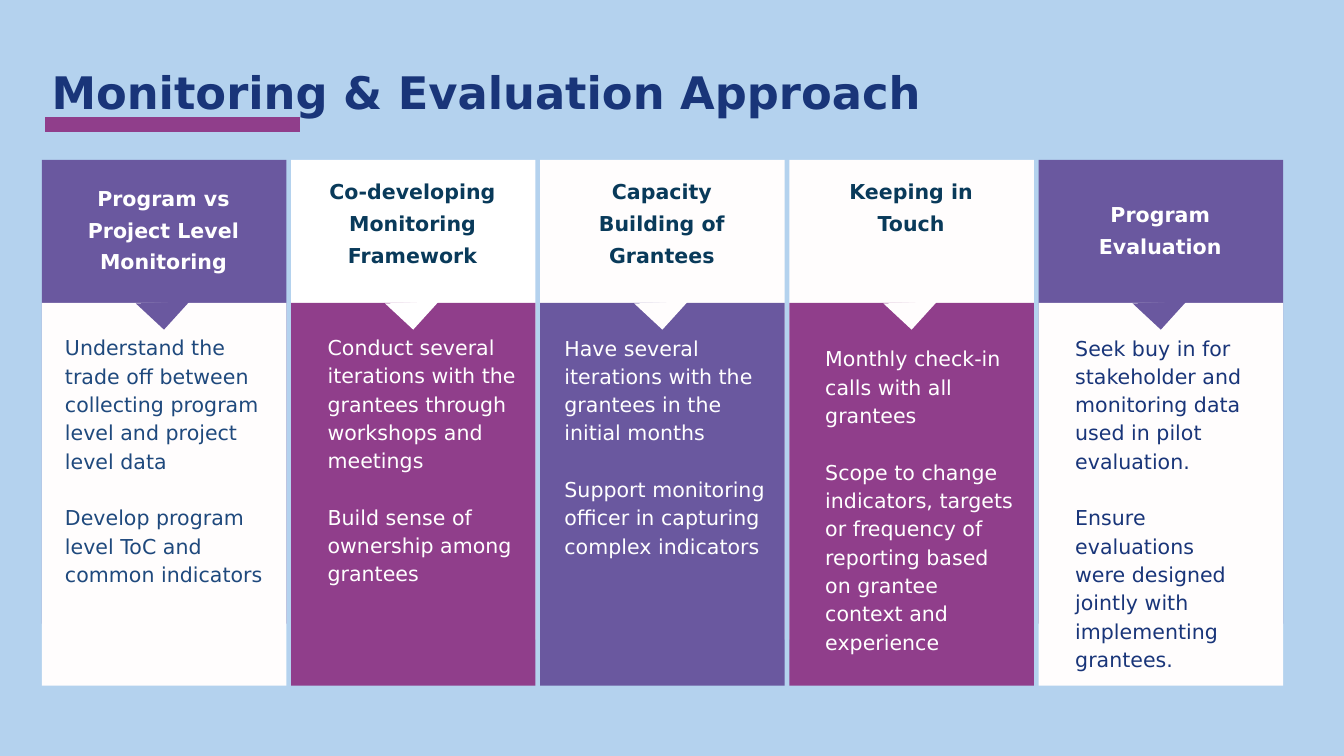
from dataclasses import dataclass

from pptx import Presentation
from pptx.dml.color import RGBColor
from pptx.enum.shapes import MSO_SHAPE as SHAPE
from pptx.enum.text import MSO_ANCHOR as ANCHOR, MSO_AUTO_SIZE as AUTO, PP_ALIGN as ALIGN
from pptx.util import Pt


@dataclass(frozen=True)
class Theme:
    font: str = "DejaVu Sans"
    sky: str = "B4D2EE"
    navy: str = "193579"
    blue: str = "1F497D"
    teal: str = "093A5A"
    violet: str = "6A589F"
    plum: str = "903E8B"
    white: str = "FFFFFF"
    snow: str = "FFFDFD"
    title_size: int = 24
    text_size: int = 11


T = Theme()

LEFT, PITCH, COL_W = 22.4, 133.5, 131
HEAD_Y, BODY_Y, BODY_H = 85.7, 162.3, 205
ARROW = [(79.2, 161.5), (65.5, 176.6), (50.4, 162.6)]

# Boxes are (offset from the column's left edge, top, width, height).
COLUMNS = [
    dict(head="Program vs Project Level Monitoring", head_box=(13, 90, 104.4, 62.6),
         head_fill=T.violet, head_color=T.white, anchor=ANCHOR.MIDDLE, head_h=248.4,
         body=["Understand the trade off between collecting program level and project level data",
               "Develop program level ToC and common indicators"],
         body_box=(12.4, 177.8, 118.8, 166), body_fill=T.snow, body_color=T.blue),
    dict(head="Co-developing Monitoring Framework", head_box=(9.7, 92.2, 110.9, 66),
         head_fill=T.white, head_color=T.teal, anchor=ANCHOR.TOP, head_h=257,
         body=["Conduct several iterations with the grantees through workshops and meetings",
               "Build sense of ownership among grantees"],
         body_box=(19.6, 177.5, 104.4, 166), body_fill=T.plum, body_color=T.white),
    dict(head="Capacity Building of Grantees", head_box=(13, 92.2, 104.4, 66),
         head_fill=T.snow, head_color=T.teal, anchor=ANCHOR.TOP, head_h=257,
         body=["Have several iterations with the grantees in the initial months",
               "Support monitoring officer in capturing complex indicators"],
         body_box=(13, 177.8, 110.9, 151), body_fill=T.violet, body_color=T.white),
    dict(head="Keeping in Touch", head_box=(13, 92.2, 104.4, 66),
         head_fill=T.snow, head_color=T.teal, anchor=ANCHOR.TOP, head_h=257,
         body=["Monthly check-in calls with all grantees",
               "Scope to change indicators, targets or frequency of reporting "
               "based on grantee context and experience"],
         body_box=(19.2, 183.6, 104.4, 168), body_fill=T.plum, body_color=T.white),
    dict(head="Program Evaluation", head_box=(13, 90, 104.4, 62.6),
         head_fill=T.violet, head_color=T.white, anchor=ANCHOR.MIDDLE, head_h=248.4,
         body=["Seek buy in for stakeholder and monitoring data used in pilot evaluation.",
               "Ensure evaluations were designed jointly with implementing grantees."],
         body_box=(19.6, 177.8, 92.2, 182), body_fill=T.snow, body_color=T.navy),
]


def set_all(target, **values):
    for name, value in values.items():
        setattr(target, name, value)


def paint(sp, color):
    sp.shadow.inherit = False
    sp.fill.solid()
    sp.fill.fore_color.rgb = RGBColor.from_string(color)
    sp.line.fill.background()


def add_block(s, x, y, w, h, color, kind=SHAPE.RECTANGLE):
    paint(s.shapes.add_shape(kind, Pt(x), Pt(y), Pt(w), Pt(h)), color)


def add_arrow(s, x, color):
    points = [(Pt(x + dx), Pt(y)) for dx, y in ARROW]
    builder = s.shapes.build_freeform(*points[0])
    builder.add_line_segments(points[1:], close=True)
    paint(builder.convert_to_shape(), color)


def write(sp, texts, color, size=T.text_size, bold=False, align=ALIGN.LEFT,
          spacing=1.15, anchor=ANCHOR.TOP, inset=0):
    tf = sp.text_frame
    set_all(tf, word_wrap=True, auto_size=AUTO.NONE, vertical_anchor=anchor,
            margin_left=Pt(inset), margin_right=Pt(inset),
            margin_top=Pt(inset), margin_bottom=Pt(inset))
    for i, text in enumerate(texts):
        p = tf.add_paragraph() if i else tf.paragraphs[0]
        set_all(p, alignment=align, line_spacing=spacing, space_before=Pt(15.2 if i else 0))
        r = p.add_run()
        r.text = text
        set_all(r.font, name=T.font, size=Pt(size), bold=bold)
        r.font.color.rgb = RGBColor.from_string(color)


def add_text(s, x, y, w, h, texts, color, **style):
    write(s.shapes.add_textbox(Pt(x), Pt(y), Pt(w), Pt(h)), texts, color, **style)


def add_title(s, text):
    sp = s.shapes.title
    set_all(sp, left=Pt(24), top=Pt(22.3), width=Pt(608.4), height=Pt(36))
    write(sp, [text], T.navy, size=T.title_size, bold=True, spacing=1.31, inset=3.6)
    add_block(s, 24, 62.8, 136.8, 8.1, T.plum, SHAPE.FLOWCHART_PROCESS)


def add_column(s, x, col):
    add_block(s, x, HEAD_Y, COL_W, col["head_h"], col["head_fill"])
    add_block(s, x, BODY_Y, COL_W, BODY_H, col["body_fill"])
    add_arrow(s, x, col["head_fill"])
    dx, *box = col["head_box"]
    add_text(s, x + dx, *box, [col["head"]], col["head_color"], bold=True,
             align=ALIGN.CENTER, spacing=1.29, anchor=col["anchor"])
    dx, *box = col["body_box"]
    add_text(s, x + dx, *box, col["body"], col["body_color"])


def main():
    prs = Presentation()
    set_all(prs, slide_width=Pt(720), slide_height=Pt(405))
    s = prs.slides.add_slide(prs.slide_layouts[5])
    s.background.fill.solid()
    s.background.fill.fore_color.rgb = RGBColor.from_string(T.sky)
    add_title(s, "Monitoring & Evaluation Approach")
    for i, col in enumerate(COLUMNS):
        add_column(s, LEFT + i * PITCH, col)
    prs.save("out.pptx")


if __name__ == "__main__":
    main()
